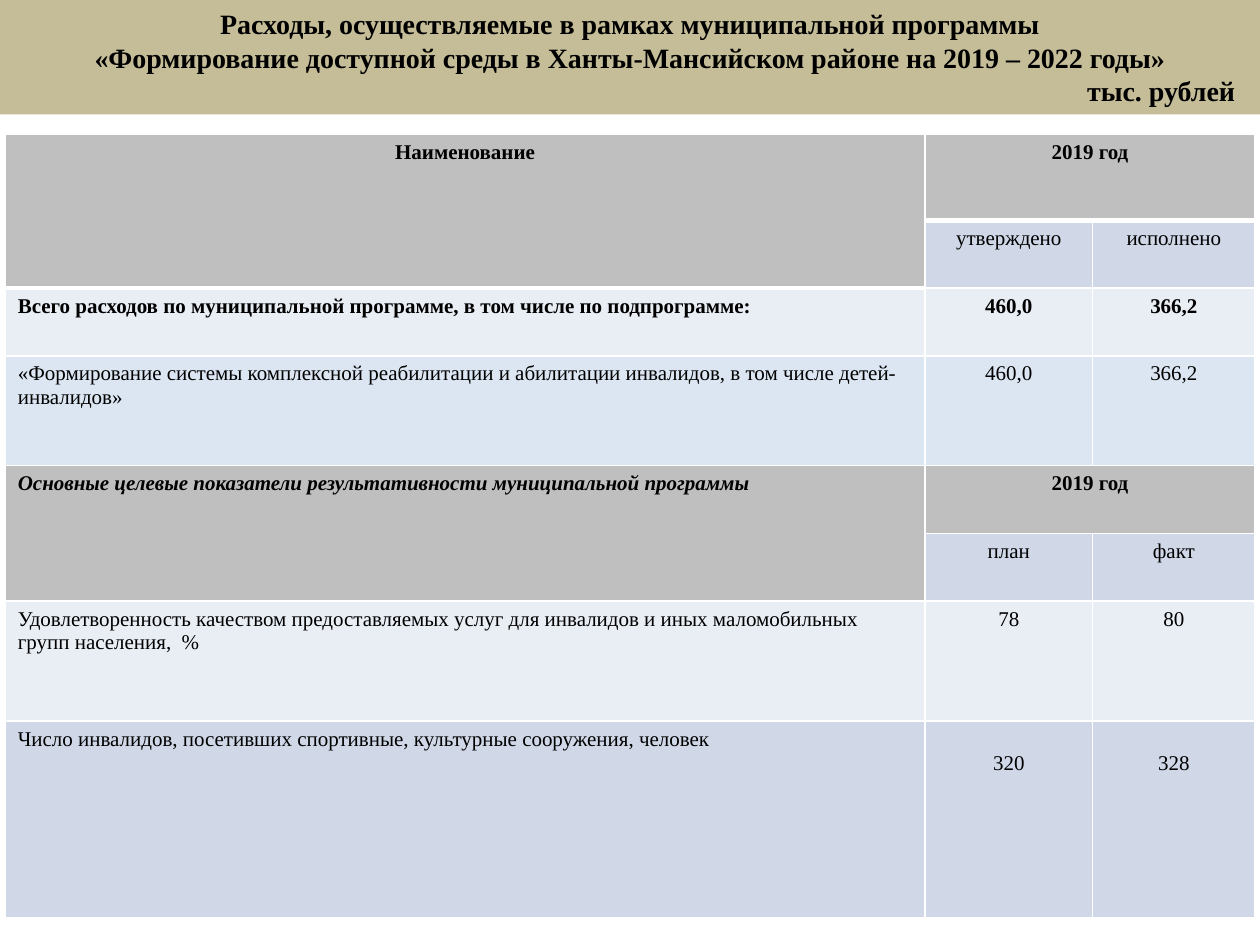
from dataclasses import dataclass
from lxml.etree import SubElement
from pptx import Presentation
from pptx.dml.color import RGBColor as Color
from pptx.enum.shapes import MSO_SHAPE as Shape
from pptx.enum.text import MSO_ANCHOR as Anchor, PP_ALIGN as Align
from pptx.oxml.ns import qn
from pptx.util import Pt


@dataclass(frozen=True)
class Theme:
    font: str = "Times New Roman"
    title_size: int = 16
    table_size: int = 12
    text: str = "000000"
    banner: str = "C4BD97"
    border: str = "FFFFFF"
    header: str = "BFBFBF"
    blue: str = "D0D8E8"
    pale: str = "E9EDF4"
    sky: str = "DCE6F2"


THEME = Theme()

TITLE = [
    ("Расходы, осуществляемые в рамках муниципальной программы", Align.CENTER),
    ("«Формирование доступной среды в Ханты-Мансийском районе на 2019 – 2022 годы»", Align.CENTER),
    ("тыс. рублей", Align.RIGHT),
]

COLUMN_WIDTHS = [525.6, 95.76, 92.88]
ROWS = [
    (("Наименование", "2019 год", None), THEME.header, True, 48.96),
    ((None, "утверждено", "исполнено"), THEME.blue, False, 38.7),
    (("Всего расходов по муниципальной программе, в том числе по подпрограмме:", "460,0", "366,2"),
     THEME.pale, True, 38.7),
    (("«Формирование системы комплексной реабилитации и абилитации инвалидов, "
      "в том числе детей-инвалидов»", "460,0", "366,2"), THEME.sky, False, 62.8),
    (("Основные целевые показатели результативности муниципальной программы", "2019 год", None),
     THEME.header, True, 38.7),
    ((None, "план", "факт"), THEME.blue, False, 38.7),
    (("Удовлетворенность качеством предоставляемых услуг для инвалидов и иных "
      "маломобильных групп населения,  %", "78", "80"), THEME.pale, False, 68.6),
    (("Число инвалидов, посетивших спортивные, культурные сооружения, человек", "320", "328"),
     THEME.blue, False, 112.4),
]
HEADER_ROWS = (0, 4)
LOWERED_ROW = 7


def write(paragraph, text, size, bold, align, italic=False):
    paragraph.text = text
    paragraph.alignment = align
    font = paragraph.font
    font.name, font.size = THEME.font, Pt(size)
    font.bold, font.italic = bold, italic
    font.color.rgb = Color.from_string(THEME.text)


def paint(target, color):
    target.fill.solid()
    target.fill.fore_color.rgb = Color.from_string(color)


def add_borders(cell, bottom):
    properties = cell._tc.get_or_add_tcPr()
    widths = {"a:lnL": 1, "a:lnR": 1, "a:lnT": 1, "a:lnB": bottom}
    for tag, width in widths.items():
        line = SubElement(properties, qn(tag), w=str(Pt(width)))
        SubElement(SubElement(line, qn("a:solidFill")), qn("a:srgbClr"), val=THEME.border)


def add_banner(slide):
    banner = slide.shapes.add_shape(Shape.RECTANGLE, Pt(0), Pt(0), Pt(720), Pt(65.4))
    banner.shadow.inherit = False
    paint(banner, THEME.banner)
    banner.line.fill.background()
    frame = banner.text_frame
    frame.word_wrap = True
    frame.vertical_anchor = Anchor.MIDDLE
    frame.margin_left = frame.margin_right = Pt(14.2)
    for index, (text, align) in enumerate(TITLE):
        paragraph = frame.add_paragraph() if index else frame.paragraphs[0]
        write(paragraph, text, THEME.title_size, True, align)


def add_budget_table(slide):
    heights = [row[-1] for row in ROWS]
    table = slide.shapes.add_table(
        len(ROWS), len(COLUMN_WIDTHS), Pt(3), Pt(77),
        Pt(sum(COLUMN_WIDTHS)), Pt(sum(heights))).table
    for column, width in zip(table.columns, COLUMN_WIDTHS):
        column.width = Pt(width)
    for row_index, (texts, fill, bold, height) in enumerate(ROWS):
        table.rows[row_index].height = Pt(height)
        for column_index, text in enumerate(texts):
            cell = table.cell(row_index, column_index)
            add_borders(cell, 3 if row_index == 0 else 1)
            paint(cell, fill)
            if text is None:
                continue
            is_name = column_index == 0
            align = Align.LEFT if is_name and row_index else Align.CENTER
            italic = is_name and row_index == HEADER_ROWS[1]
            write(cell.text_frame.paragraphs[0], text, THEME.table_size, bold, align, italic)
            if row_index == LOWERED_ROW and not is_name:
                cell.margin_top = Pt(17.4)
    for row_index in HEADER_ROWS:
        table.cell(row_index, 0).merge(table.cell(row_index + 1, 0))
        table.cell(row_index, 1).merge(table.cell(row_index, 2))


def main():
    presentation = Presentation()
    presentation.slide_width, presentation.slide_height = Pt(720), Pt(540)
    slide = presentation.slides.add_slide(presentation.slide_layouts[6])
    add_banner(slide)
    add_budget_table(slide)
    presentation.save("out.pptx")


if __name__ == "__main__":
    main()
